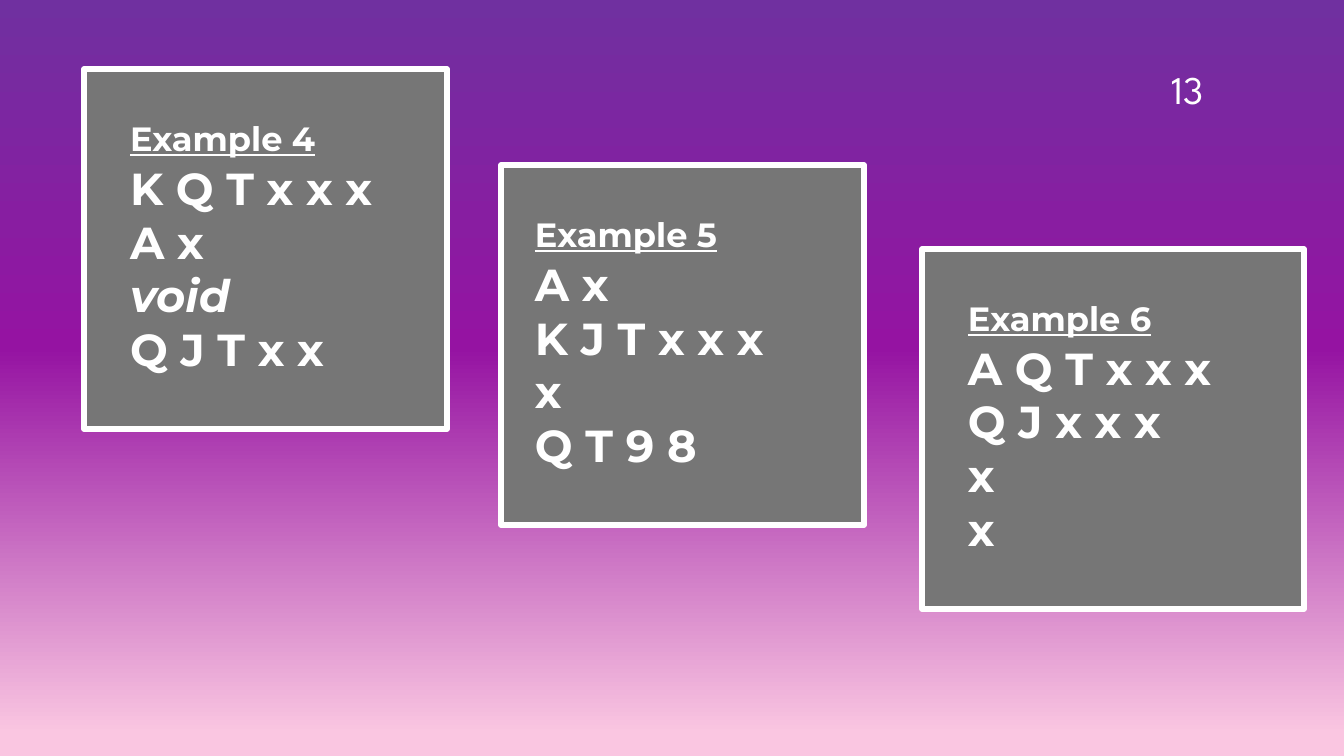
from copy import deepcopy
from dataclasses import dataclass

from pptx import Presentation
from pptx.dml.color import RGBColor
from pptx.enum.shapes import MSO_SHAPE as Shape
from pptx.enum.text import MSO_ANCHOR as Anchor, PP_ALIGN as Align
from pptx.util import Emu, Pt

PX_PER_INCH = 100.8


def px(length):
    return Emu(round(length * 914400 / PX_PER_INCH))


@dataclass(frozen=True)
class Theme:
    background: tuple = ((0, "7030A0"), (0.46, "9513A2"), (0.97, "FAC6E1"))
    card: str = "767676"
    ink: str = "FFFFFF"
    body_font: str = "Montserrat"
    number_font: str = "League Spartan"
    heading_size: int = 24
    hand_size: int = 32
    number_size: int = 28
    border: int = 4


def write(paragraph, text, *, font, size, color, bold=False, italic=False,
          underline=False, align=Align.LEFT, after=0):
    paragraph.alignment = align
    paragraph.space_after = Pt(after)
    run = paragraph.add_run()
    run.text = text
    run.font.name = font
    run.font.size = Pt(size)
    run.font.bold = bold
    run.font.italic = italic
    run.font.underline = underline
    run.font.color.rgb = RGBColor.from_string(color)


class SlideBuilder:
    def __init__(self, presentation, theme):
        self.theme = theme
        self.slide = presentation.slides.add_slide(presentation.slide_layouts[6])

    def background(self):
        fill = self.slide.background.fill
        fill.gradient()
        fill.gradient_angle = 270
        stop_list = self.slide.element.xpath(".//a:gsLst")[0]
        stop_list.append(deepcopy(stop_list[-1]))
        for stop, (position, color) in zip(fill.gradient_stops, self.theme.background):
            stop.position = position
            stop.color.rgb = RGBColor.from_string(color)

    def hand_card(self, left, top, width, height, indent, heading, suits):
        """Draw a framed card with a heading and one line for each suit."""
        theme = self.theme
        shape = self.slide.shapes.add_shape(
            Shape.RECTANGLE, px(left), px(top), px(width), px(height))
        shape.shadow.inherit = False
        shape.fill.solid()
        shape.fill.fore_color.rgb = RGBColor.from_string(theme.card)
        shape.line.color.rgb = RGBColor.from_string(theme.ink)
        shape.line.width = Pt(theme.border)
        frame = shape.text_frame
        frame.word_wrap = True
        frame.vertical_anchor = Anchor.TOP
        frame.margin_left, frame.margin_top = px(indent), px(49)
        style = dict(font=theme.body_font, color=theme.ink, bold=True)
        write(frame.paragraphs[0], heading, size=theme.heading_size,
              underline=True, after=1.5, **style)
        for suit in suits:
            write(frame.add_paragraph(), suit, size=theme.hand_size,
                  italic=suit == "void", **style)

    def page_number(self, left, top, width, height, number):
        box = self.slide.shapes.add_textbox(px(left), px(top), px(width), px(height))
        frame = box.text_frame
        frame.word_wrap = True
        frame.vertical_anchor = Anchor.BOTTOM
        write(frame.paragraphs[0], number, font=self.theme.number_font,
              size=self.theme.number_size, color=self.theme.ink, align=Align.CENTER)


def main():
    presentation = Presentation()
    presentation.slide_width, presentation.slide_height = px(1344), px(756)
    builder = SlideBuilder(presentation, Theme())
    builder.background()
    examples = (
        (84, 69, 363, 46, "Example 4", ("K Q T x x x", "A x", "void", "Q J T x x")),
        (501, 165, 363, 34, "Example 5", ("A x", "K J T x x x", "x", "Q T 9 8")),
        (922, 249, 382, 46, "Example 6", ("A Q T x x x", "Q J x x x", "x", "x")),
    )
    for left, top, width, indent, heading, suits in examples:
        builder.hand_card(left, top, width, 360, indent, heading, suits)
    builder.page_number(1141, 32, 93, 85, "13")
    presentation.save("out.pptx")


if __name__ == "__main__":
    main()
